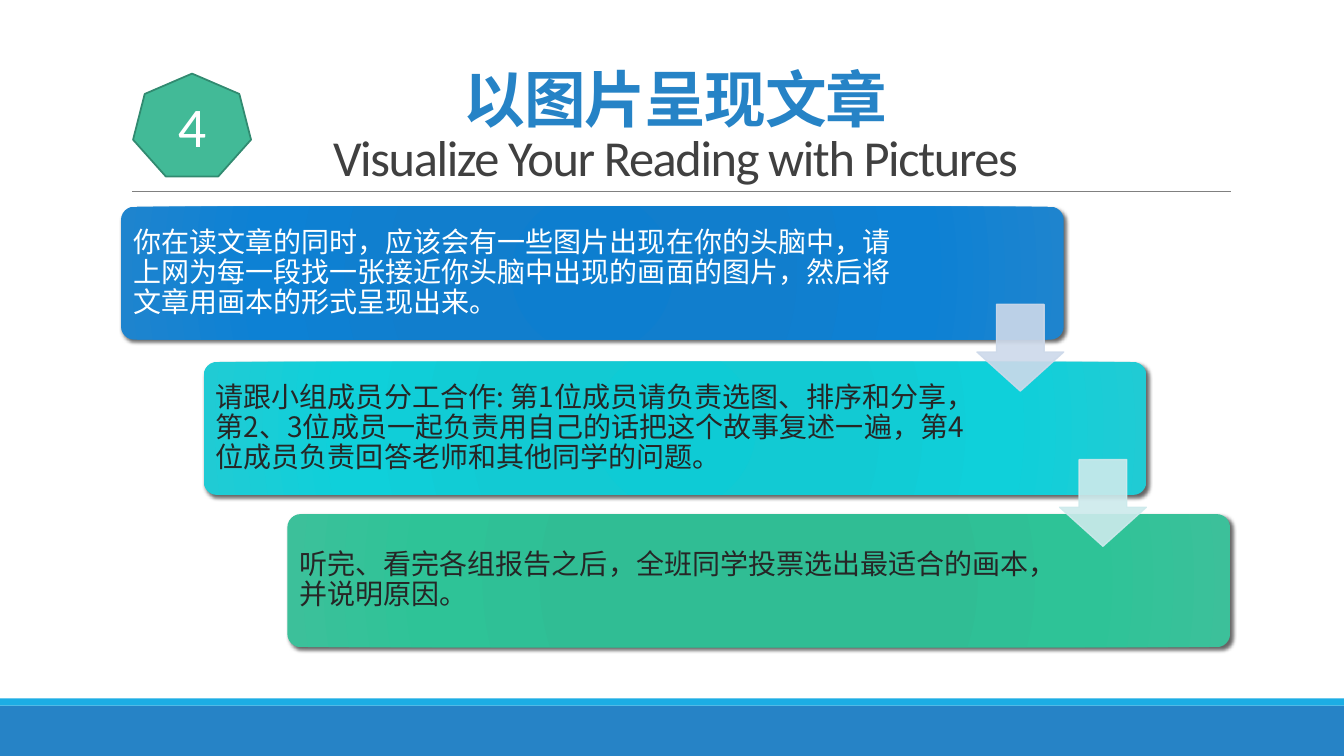
from dataclasses import dataclass
from typing import Optional

from lxml.etree import SubElement
from pptx import Presentation
from pptx.dml.color import RGBColor
from pptx.enum.shapes import MSO_CONNECTOR, MSO_SHAPE
from pptx.enum.text import MSO_ANCHOR, PP_ALIGN
from pptx.oxml import parse_xml
from pptx.oxml.ns import nsdecls, qn
from pptx.util import Inches, Pt

COLORS = {
    "blue": "2683C6",
    "sky": "1CADE4",
    "rule": "808080",
    "white": "FFFFFF",
    "ink": "262626",
    "subtitle": "404040",
    "badge": "42BA97",
    "badge_line": "318A70",
    "blue_arrow": "CDD9EA",
    "teal_arrow": "CDEAEC",
}
CHINESE_FONT = "Noto Sans CJK SC"
LATIN_FONT = "Calibri"
PANEL_WIDTH, PANEL_HEIGHT, PANEL_INSET = 9.35, 1.32, 0.04
ARROW_SIZE = 0.86
GRADIENT_STOPS = (0, 34, 70, 100)


@dataclass
class Step:
    left: float
    top: float
    text_width: float
    text: str
    text_color: str
    gradient: tuple[str, ...]
    arrow_color: Optional[str] = None


STEPS = [
    Step(1.2, 2.05, 7.93,
         "你在读文章的同时，应该会有一些图片出现在你的头脑中，请上网为每一段找一张接近你头脑中出现的画面的图片，然后将文章用画本的形式呈现出来。",
         "white", ("0D7ECF", "117ECD", "0D81D4", "1E84CE"), "blue_arrow"),
    Step(2.02, 3.59, 7.59,
         "请跟小组成员分工合作: 第1位成员请负责选图、排序和分享，第2、3位成员一起负责用自己的话把这个故事复述一遍，第4位成员负责回答老师和其他同学的问题。",
         "ink", ("0ECBD5", "12CAD3", "0FD0DA", "20CBD4"), "teal_arrow"),
    Step(2.85, 5.1, 7.59,
         "听完、看完各组报告之后，全班同学投票选出最适合的画本，并说明原因。",
         "ink", ("2DBE94", "30BD94", "2EC397", "3CC09A")),
]


def rgb(name: str) -> RGBColor:
    return RGBColor.from_string(COLORS[name])


def format_run(run, size: float, font: str, color: str, bold: bool = False) -> None:
    run.font.size = Pt(size)
    run.font.name = font
    run.font.bold = bold
    run.font.color.rgb = rgb(color)
    SubElement(run.font._element, qn("a:ea")).set("typeface", font)


def add_plain_shape(slide, kind, left: float, top: float, width: float, height: float,
                    fill: Optional[str] = None, line: Optional[str] = None,
                    line_width: float = 1):
    shape = slide.shapes.add_shape(kind, Inches(left), Inches(top), Inches(width), Inches(height))
    shape.shadow.inherit = False
    if fill:
        shape.fill.solid()
        shape.fill.fore_color.rgb = rgb(fill)
    if line:
        shape.line.color.rgb = rgb(line)
        shape.line.width = Pt(line_width)
    else:
        shape.line.fill.background()
    return shape


def add_text(slide, left: float, top: float, width: float, height: float, text: str,
             anchor, line_spacing: float):
    frame = slide.shapes.add_textbox(
        Inches(left), Inches(top), Inches(width), Inches(height)).text_frame
    frame.word_wrap = True
    frame.vertical_anchor = anchor
    paragraph = frame.paragraphs[0]
    paragraph.text = text
    paragraph.line_spacing = line_spacing
    return frame


def add_panel(slide, step: Step) -> None:
    panel = add_plain_shape(slide, MSO_SHAPE.ROUNDED_RECTANGLE, step.left, step.top,
                            PANEL_WIDTH, PANEL_HEIGHT)
    panel.adjustments[0] = 0.1
    stops = "".join(
        f'<a:gs pos="{position * 1000}"><a:srgbClr val="{color}"/></a:gs>'
        for position, color in zip(GRADIENT_STOPS, step.gradient))
    properties = panel._element.spPr
    properties.find(qn("a:prstGeom")).addnext(parse_xml(
        f'<a:gradFill {nsdecls("a")} rotWithShape="1"><a:gsLst>{stops}</a:gsLst>'
        '<a:path path="circle"><a:fillToRect l="100000" t="100000" r="100000" b="100000"/>'
        '</a:path></a:gradFill>'))
    properties.find(qn("a:effectLst")).append(parse_xml(
        f'<a:outerShdw {nsdecls("a")} blurRad="{Pt(3)}" dist="{Pt(2)}" dir="2700000" '
        'rotWithShape="0"><a:srgbClr val="000000"><a:alpha val="60000"/></a:srgbClr>'
        '</a:outerShdw>'))

    frame = add_text(slide, step.left + PANEL_INSET, step.top + PANEL_INSET, step.text_width,
                     PANEL_HEIGHT - 2 * PANEL_INSET, step.text, MSO_ANCHOR.MIDDLE, 0.9)
    frame.margin_left = frame.margin_right = Inches(0.08)
    frame.margin_top = frame.margin_bottom = Inches(0.08)
    format_run(frame.paragraphs[0].runs[0], 20, CHINESE_FONT, step.text_color)


def add_arrow(slide, step: Step) -> None:
    arrow = add_plain_shape(slide, MSO_SHAPE.DOWN_ARROW,
                            step.left + PANEL_WIDTH - ARROW_SIZE, step.top + 0.97,
                            ARROW_SIZE, ARROW_SIZE, step.arrow_color, step.arrow_color)
    arrow.adjustments[0] = 0.55
    arrow.adjustments[1] = 0.45
    for color in arrow._element.spPr.iter(qn("a:srgbClr")):
        SubElement(color, qn("a:alpha")).set("val", "90000")


def add_title(slide) -> None:
    frame = add_text(slide, 1.2, 0.31, 11, 1.59,
                     "以图片呈现文章\vVisualize Your Reading with Pictures",
                     MSO_ANCHOR.BOTTOM, 0.85)
    paragraph = frame.paragraphs[0]
    paragraph.alignment = PP_ALIGN.CENTER
    chinese, english = paragraph.runs
    format_run(chinese, 44, CHINESE_FONT, "blue", bold=True)
    format_run(english, 36, LATIN_FONT, "subtitle")
    for run in paragraph.runs:
        run.font._element.set("spc", "-100")


def add_badge(slide) -> None:
    badge = add_plain_shape(slide, MSO_SHAPE.HEPTAGON, 1.32, 0.73, 1.17, 1.02,
                            "badge", "badge_line", 1.25)
    badge.text_frame.text = "4"
    badge.text_frame.vertical_anchor = MSO_ANCHOR.MIDDLE
    paragraph = badge.text_frame.paragraphs[0]
    paragraph.alignment = PP_ALIGN.CENTER
    format_run(paragraph.runs[0], 40, LATIN_FONT, "white")


def add_rule(slide) -> None:
    rule = slide.shapes.add_connector(MSO_CONNECTOR.STRAIGHT, Inches(1.31), Inches(1.9),
                                      Inches(12.21), Inches(1.9))
    rule.line.color.rgb = rgb("rule")
    rule.line.width = Pt(0.5)
    SubElement(rule._element.spPr, qn("a:effectLst"))


def main() -> None:
    presentation = Presentation()
    presentation.slide_width = Inches(13.33)
    presentation.slide_height = Inches(7.5)
    slide = presentation.slides.add_slide(presentation.slide_layouts[6])

    add_plain_shape(slide, MSO_SHAPE.RECTANGLE, 0, 7, 13.33, 0.5, "blue")
    add_plain_shape(slide, MSO_SHAPE.RECTANGLE, 0, 6.93, 13.33, 0.07, "sky")
    add_rule(slide)
    for step in STEPS:
        add_panel(slide, step)
    for step in STEPS:
        if step.arrow_color:
            add_arrow(slide, step)
    add_title(slide)
    add_badge(slide)
    presentation.save("out.pptx")


if __name__ == "__main__":
    main()
